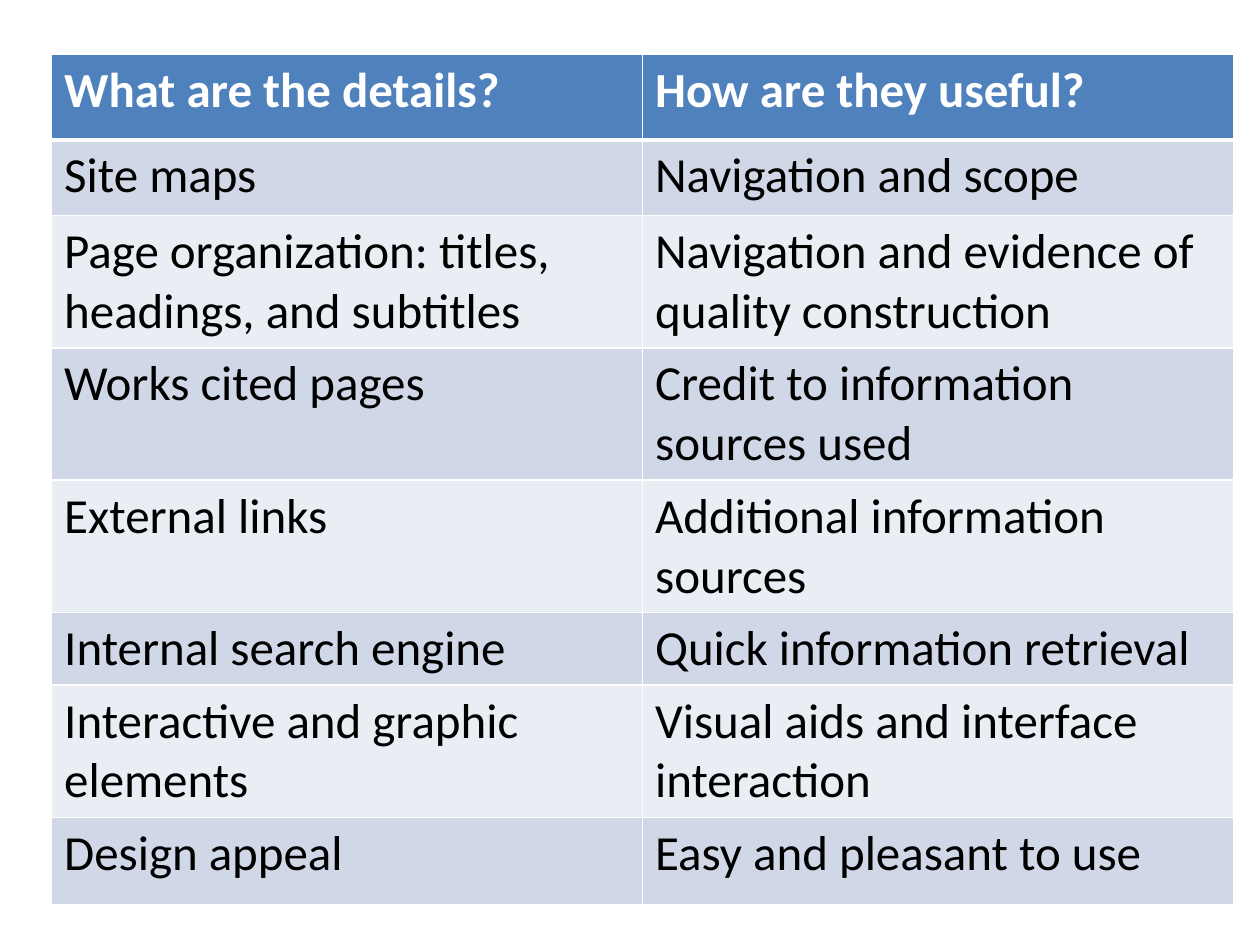
from lxml import etree
from pptx import Presentation
from pptx import util as u
from pptx.dml.color import RGBColor
from pptx.oxml.ns import qn

HEADINGS = ("What are the details?", "How are they useful?")
DETAILS = [
    # detail, use, row height
    ("Site maps", "Navigation and scope", 0.6),
    ("Page organization: titles, headings, and subtitles",
     "Navigation and evidence of quality construction", 0.94),
    ("Works cited pages", "Credit to information sources used", 0.94),
    ("External links", "Additional information sources", 0.94),
    ("Internal search engine", "Quick information retrieval", 0.54),
    ("Interactive and graphic elements",
     "Visual aids and interface interaction", 0.94),
    ("Design appeal", "Easy and pleasant to use", 0.69),
]
HEADING_HEIGHT = 0.68
LEFT, TOP, COLUMN_WIDTH = 0.41, 0.43, 4.69

THEME = {
    "font": "Calibri",
    "size": 28,
    "heading_fill": "4F81BD",
    "heading_text": "FFFFFF",
    "body_fills": ("D0D8E8", "E9EDF4"),
    "body_text": "000000",
    "rule": "FFFFFF",
    "thin": 1,
    "thick": 3,
}


def add_borders(cell, top, bottom):
    """Rule all four sides; top and bottom are widths in points."""
    properties = cell._tc.get_or_add_tcPr()
    sides = {"lnL": THEME["thin"], "lnR": THEME["thin"], "lnT": top, "lnB": bottom}
    for position, (side, width) in enumerate(sides.items()):
        border = etree.Element(qn(f"a:{side}"), w=str(u.Pt(width)))
        fill = etree.SubElement(border, qn("a:solidFill"))
        etree.SubElement(fill, qn("a:srgbClr"), val=THEME["rule"])
        properties.insert(position, border)


def fill_cell(cell, wording, fill, color, bold):
    cell.fill.solid()
    cell.fill.fore_color.rgb = RGBColor.from_string(fill)
    cell.text_frame.text = wording
    font = cell.text_frame.paragraphs[0].runs[0].font
    font.name = THEME["font"]
    font.size = u.Pt(THEME["size"])
    font.bold = bold
    font.color.rgb = RGBColor.from_string(color)


def main():
    deck = Presentation()
    deck.slide_width, deck.slide_height = u.Inches(10), u.Inches(7.5)
    slide = deck.slides.add_slide(deck.slide_layouts[6])

    rows = [(*HEADINGS, HEADING_HEIGHT), *DETAILS]
    columns = len(HEADINGS)
    table = slide.shapes.add_table(
        len(rows), columns, u.Inches(LEFT), u.Inches(TOP),
        u.Inches(COLUMN_WIDTH * columns), u.Inches(sum(row[-1] for row in rows)),
    ).table
    for column in table.columns:
        column.width = u.Inches(COLUMN_WIDTH)

    for index, (*wordings, height) in enumerate(rows):
        table.rows[index].height = u.Inches(height)
        heading = index == 0
        fill = THEME["heading_fill"] if heading else THEME["body_fills"][(index - 1) % 2]
        color = THEME["heading_text"] if heading else THEME["body_text"]
        top = THEME["thick"] if index == 1 else THEME["thin"]
        bottom = THEME["thick"] if heading else THEME["thin"]
        for cell, wording in zip(table.rows[index].cells, wordings):
            fill_cell(cell, wording, fill, color, heading)
            add_borders(cell, top, bottom)

    deck.save("out.pptx")


if __name__ == "__main__":
    main()
